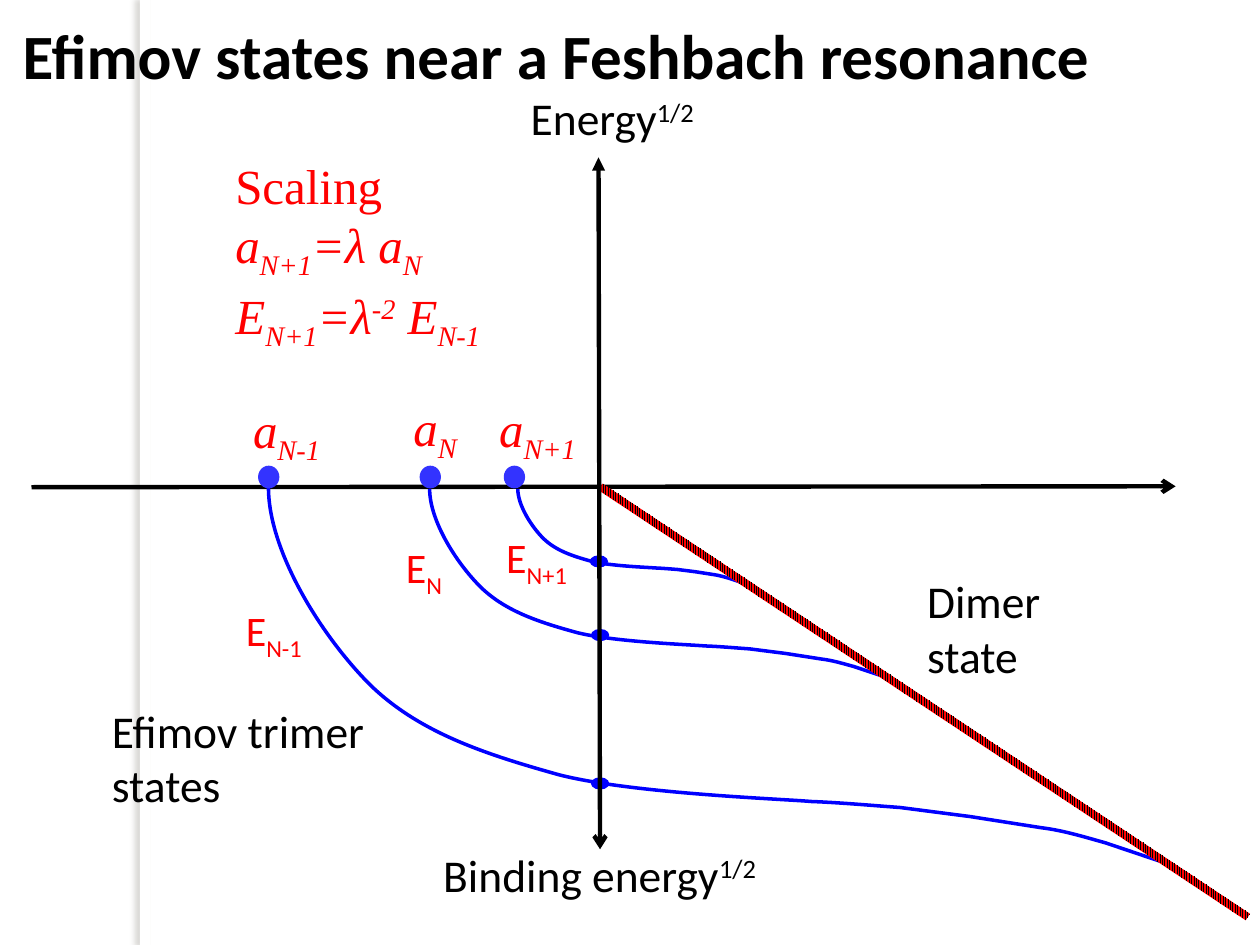
from lxml.etree import SubElement
from pptx import Presentation
from pptx.dml.color import RGBColor
from pptx.enum.dml import MSO_PATTERN
from pptx.enum.shapes import MSO_CONNECTOR, MSO_SHAPE
from pptx.enum.text import MSO_AUTO_SIZE
from pptx.oxml.ns import qn
from pptx.util import Pt

BLACK, RED, BLUE, DOT_BLUE = "000000", "FF0000", "0000FF", "3333FF"
color = RGBColor.from_string

presentation = Presentation()
presentation.slide_width, presentation.slide_height = Pt(720), Pt(540)
slide = presentation.slides.add_slide(presentation.slide_layouts[6])


def add_plain_shape(kind, left, top, width, height, fill):
    shape = slide.shapes.add_shape(kind, Pt(left), Pt(top), Pt(width), Pt(height))
    shape.fill.solid()
    shape.fill.fore_color.rgb = color(fill)
    shape.line.fill.background()
    shape.shadow.inherit = False
    return shape


def add_axis(start, end, arrowheads):
    axis = slide.shapes.add_connector(MSO_CONNECTOR.STRAIGHT, *map(Pt, start + end))
    axis.line.width = Pt(2.5)
    axis.line.color.rgb = color(BLACK)
    line = axis.line._get_or_add_ln()
    for tag, arrow in arrowheads:
        SubElement(line, qn(tag), type=arrow)
    SubElement(axis._element.spPr, qn("a:effectLst"))


band = add_plain_shape(MSO_SHAPE.RECTANGLE, 80, 0, 5.75, 540, "FFFFFF")
effects = band._element.spPr.find(qn("a:effectLst"))
shadow = SubElement(effects, qn("a:outerShdw"), blurRad=str(Pt(3)), dist=str(Pt(3)),
                    dir="10800000", algn="tl", rotWithShape="0")
shadow_color = SubElement(shadow, qn("a:srgbClr"), val="706B5F")
SubElement(shadow_color, qn("a:alpha"), val="25000")

add_axis((18, 278.4), (671.8, 277.9), [("a:tailEnd", "arrow")])

trimer_outline = [
    [(0, 17.1), (6, 39.9), (11.4, 52.7)],
    [(16.9, 65.4), (24.3, 71.1), (32.4, 76.5)],
    [(40.6, 81.5), (57.2, 82.9), (60.5, 83.6)],
    [(63.8, 83.9), (67, 84.6), (70.4, 85.2)],
    [(78.2, 87.6)],
    [(86.2, 90.6)],
    [(88.6, 91.3), (90.9, 93), (93.3, 94.6)],
    [(100, 100)],
]
for left, top, width, height in [(245.5, 279.4, 259.9, 107.3),
                                 (153.4, 278.6, 512.6, 214.6),
                                 (295.9, 279.4, 129.6, 54)]:
    builder = slide.shapes.build_freeform(Pt(left), Pt(top))
    builder.add_line_segments(
        [(Pt(left + x * width / 100), Pt(top + y * height / 100))
         for segment in trimer_outline for x, y in segment], close=False)
    curve = builder.convert_to_shape()
    outline = next(curve._element.iter(qn("a:path")))
    straight_pieces = iter(outline.findall(qn("a:lnTo")))
    for segment in trimer_outline:
        tag = "a:cubicBezTo" if len(segment) == 3 else "a:lnTo"
        stretch = SubElement(outline, qn(tag))
        for _ in segment:
            piece = next(straight_pieces)
            stretch.append(piece[0])
            outline.remove(piece)
    curve.fill.background()
    curve.line.width = Pt(2)
    curve.line.color.rgb = color(BLUE)
    curve.shadow.inherit = False

for left in (147.5, 239.8, 287.9):
    add_plain_shape(MSO_SHAPE.OVAL, left, 266.1, 12.2, 13, DOT_BLUE)

dimer_line = add_plain_shape(MSO_SHAPE.RECTANGLE, 306, 398.9, 444.2, 4.5, RED)
dimer_line.rotation = 33.6
dimer_line.fill.patterned()
dimer_line.fill.pattern = MSO_PATTERN.LIGHT_VERTICAL
dimer_line.fill.fore_color.rgb = color(BLACK)
dimer_line.fill.back_color.rgb = color(RED)

for left, top in [(337.7, 444.2), (337, 317.3), (337.7, 359.4)]:
    add_plain_shape(MSO_SHAPE.OVAL, left, top, 10.5, 7, BLUE)

add_axis((342.9, 485.3), (342, 90), [("a:headEnd", "arrow"), ("a:tailEnd", "triangle")])

title_style = ("Calibri", 36, BLACK, True, False)
label_style = ("Calibri", 26, BLACK, False, False)
energy_style = ("Calibri", 24, RED, False, False)
heading_style = ("Times New Roman", 28, RED, False, False)
formula_style = ("Times New Roman", 28, RED, False, True)
baselines = {"_": "-25000", "^": "30000"}

texts = [
    (5.8, 5.8, 709.2, 51.1, [("Efimov states near a Feshbach resonance", title_style)]),
    (246.2, 480.5, 198, 38.9, [("Binding energy|^1/2", label_style)]),
    (56.9, 398, 161.3, 70.6, [("Efimov trimer", label_style), ("states", label_style)]),
    (296.2, 48.2, 111.6, 38.9, [("Energy|^1/2", label_style)]),
    (133.4, 342, 52.6, 36, [("E|_N-1", energy_style)]),
    (224.8, 306, 39.6, 36, [("E|_N", energy_style)]),
    (282.2, 300.2, 56.9, 36, [("E|_N+1", energy_style)]),
    (522.7, 324, 83.5, 70.6, [("Dimer", label_style), ("state", label_style)]),
    (137.5, 224.6, 56.9, 41, [("a|_N-1", formula_style)]),
    (229.2, 223.5, 41, 41, [("a|_N", formula_style)]),
    (278.1, 223.9, 63.4, 41, [("a|_N+1", formula_style)]),
    (127.4, 85.4, 131.8, 74.9, [("Scaling", heading_style),
                                ("a|_N+1|=λ a|_N", formula_style)]),
    (127.5, 159.4, 169.9, 41, [("E|_N+1|=λ|^-2| E|_N-1", formula_style)]),
]
for left, top, width, height, lines in texts:
    box = slide.shapes.add_textbox(Pt(left), Pt(top), Pt(width), Pt(height))
    frame = box.text_frame
    frame.word_wrap = False
    frame.auto_size = MSO_AUTO_SIZE.SHAPE_TO_FIT_TEXT
    for index, (markup, style) in enumerate(lines):
        paragraph = frame.add_paragraph() if index else frame.paragraphs[0]
        font = paragraph.font
        font.name, size, text_color, font.bold, font.italic = style
        font.size = Pt(size)
        font.color.rgb = color(text_color)
        for piece in markup.split("|"):
            run = paragraph.add_run()
            run.text = piece.lstrip("_^")
            if piece[0] in baselines:
                run._r.get_or_add_rPr().set("baseline", baselines[piece[0]])

presentation.save("out.pptx")
